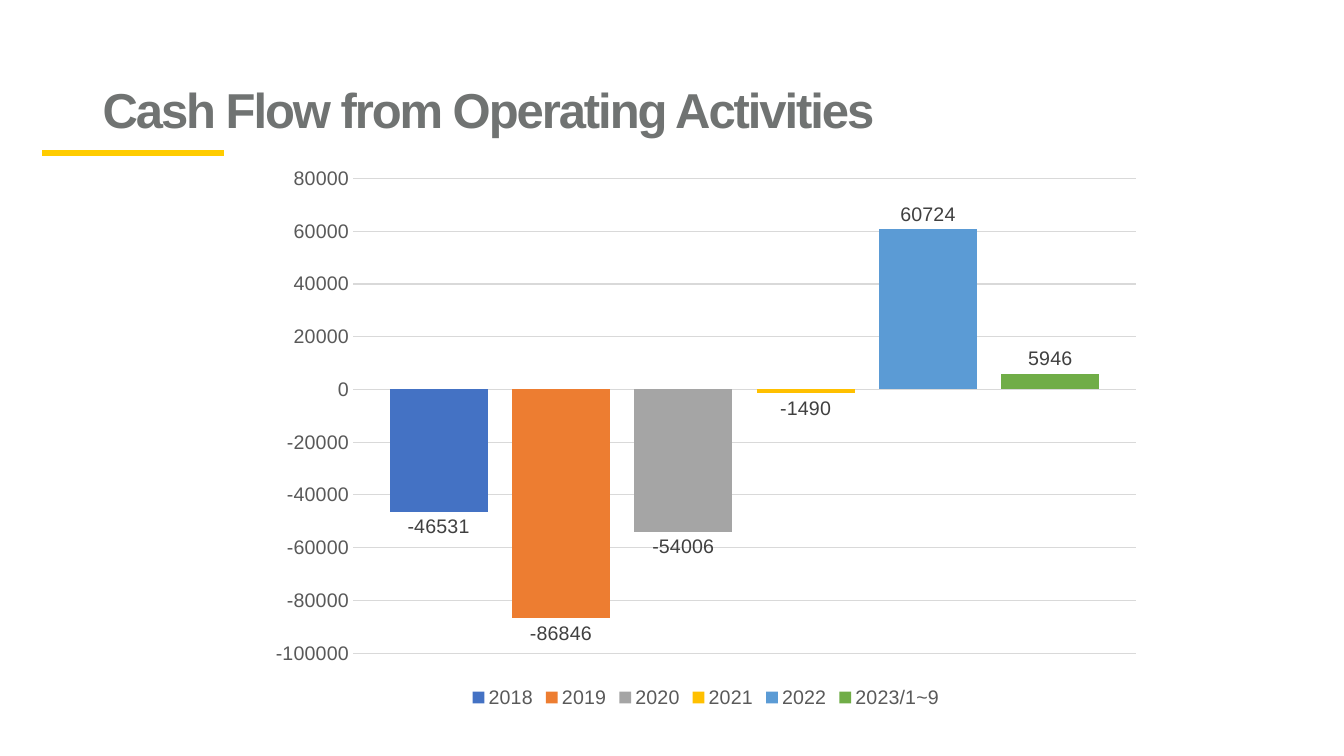
from dataclasses import dataclass

from lxml import etree
from pptx import Presentation
from pptx.chart.data import CategoryChartData
from pptx.dml.color import RGBColor
from pptx.enum import chart as charts, shapes, text
from pptx.oxml.ns import qn
from pptx.util import Cm, Pt


@dataclass(frozen=True)
class Theme:
    font: str = "Arial"
    title_size: float = 35
    chart_size: float = 14
    title: str = "707372"
    accent: str = "FFCC00"
    axis: str = "595959"
    label: str = "404040"
    grid: str = "D9D9D9"


THEME = Theme()
CASH_FLOWS = [
    ("2018", -46531, "4472C4"),
    ("2019", -86846, "ED7D31"),
    ("2020", -54006, "A5A5A5"),
    ("2021", -1490, "FFC000"),
    ("2022", 60724, "5B9BD5"),
    ("2023/1~9", 5946, "70AD47"),
]


def style_font(font, size, color, bold=False):
    formats = {"name": THEME.font, "size": Pt(size), "bold": bold}
    for attribute, value in formats.items():
        setattr(font, attribute, value)
    font.color.rgb = RGBColor.from_string(color)


deck = Presentation()
deck.slide_width, deck.slide_height = Cm(33.87), Cm(19.05)
slide = deck.slides.add_slide(deck.slide_layouts[5])

# Title
title = slide.shapes.title
title_place = {"left": Cm(2.33), "top": Cm(1.01), "width": Cm(29.21), "height": Cm(3.68)}
for attribute, value in title_place.items():
    setattr(title, attribute, value)
title.text_frame.vertical_anchor = text.MSO_ANCHOR.MIDDLE
heading = title.text_frame.paragraphs[0]
heading.alignment = text.PP_ALIGN.LEFT
heading.line_spacing = 0.9
heading_run = heading.add_run()
heading_run.text = "Cash Flow from Operating Activities"
style_font(heading_run.font, THEME.title_size, THEME.title, bold=True)
heading_run.font._element.set("spc", "-150")

# Accent rule under the title
accent = slide.shapes.add_connector(
    shapes.MSO_CONNECTOR.STRAIGHT, Cm(1.07), Cm(3.85), Cm(5.65), Cm(3.85))
accent.line.color.rgb = RGBColor.from_string(THEME.accent)
accent.line.width = Pt(4.5)
etree.SubElement(accent._element.spPr, qn("a:effectLst"))

# Cash flow chart, one series per period
cash_data = CategoryChartData(number_format="General")
cash_data.categories = ["1"]
for period, amount, _ in CASH_FLOWS:
    cash_data.add_series(period, [amount])
chart = slide.shapes.add_chart(
    charts.XL_CHART_TYPE.COLUMN_CLUSTERED,
    Cm(6.5), Cm(3.94), Cm(22.58), Cm(14.02), cash_data).chart
style_font(chart.font, THEME.chart_size, "000000")
chart.has_title = False

chart.has_legend = True
chart.legend.position = charts.XL_LEGEND_POSITION.BOTTOM
chart.legend.include_in_layout = False
style_font(chart.legend.font, THEME.chart_size, THEME.axis)

chart.category_axis.visible = False
amounts = chart.value_axis
amounts.minimum_scale, amounts.maximum_scale = -100000, 80000
amounts.major_unit = 20000
amounts.major_tick_mark = amounts.minor_tick_mark = charts.XL_TICK_MARK.NONE
amounts.format.line.fill.background()
amounts.major_gridlines.format.line.color.rgb = RGBColor.from_string(THEME.grid)
amounts.major_gridlines.format.line.width = Pt(0.75)
style_font(amounts.tick_labels.font, THEME.chart_size, THEME.axis)

columns = chart.plots[0]
columns.gap_width, columns.overlap = 75, -25
columns.vary_by_categories = False
for series, (_, _, color) in zip(columns.series, CASH_FLOWS):
    series.invert_if_negative = False
    series.format.fill.solid()
    series.format.fill.fore_color.rgb = RGBColor.from_string(color)
    labels = series.data_labels
    labels.show_value = True
    labels.position = charts.XL_LABEL_POSITION.OUTSIDE_END
    style_font(labels.font, THEME.chart_size, THEME.label)

deck.save("out.pptx")
